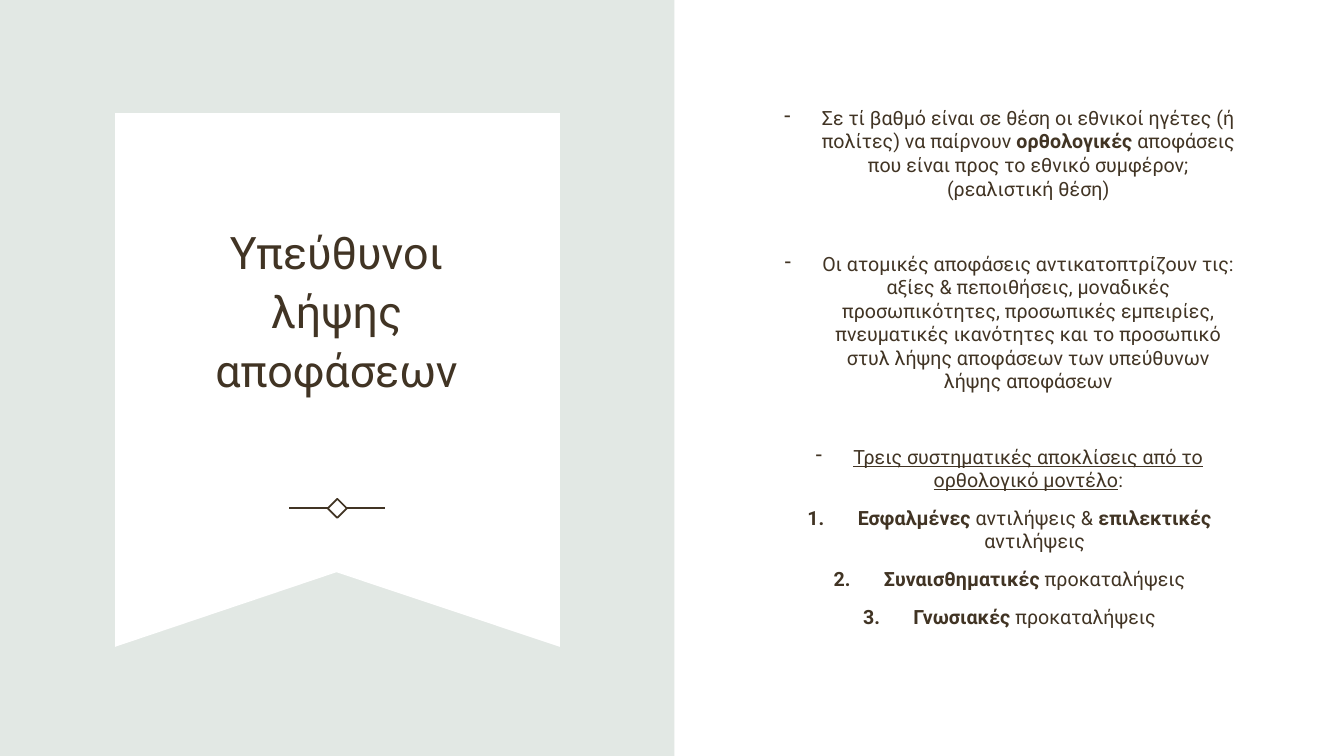
from lxml import etree
from pptx import Presentation
from pptx.dml.color import RGBColor
from pptx.enum.shapes import MSO_CONNECTOR as CONN, MSO_SHAPE as SHAPE
from pptx.enum.text import MSO_ANCHOR as ANCHOR, MSO_AUTO_SIZE as AUTO, PP_ALIGN as ALIGN
from pptx.oxml.ns import qn
from pptx.util import Cm, Pt

COLORS = {"sage": "E2E8E4", "white": "FFFFFF", "ink": "413424"}


def rgb(name):
    return RGBColor.from_string(COLORS[name])


def add_text(p, text, size=14, bold=False, underline=False):
    r = p.add_run()
    r.text = text
    r.font.name = "Roboto"
    r.font.size = Pt(size)
    r.font.bold = bold
    r.font.underline = underline
    r.font.color.rgb = rgb("ink")


prs = Presentation()
prs.slide_width, prs.slide_height = Cm(33.87), Cm(19.05)
s = prs.slides.add_slide(prs.slide_layouts[1])

panel = s.shapes.add_shape(SHAPE.RECTANGLE, 0, 0, Cm(17), prs.slide_height)
builder = s.shapes.build_freeform(Cm(2.9), Cm(2.85))
builder.add_line_segments(
    [(Cm(x), Cm(y)) for x, y in [(14.11, 2.85), (14.11, 16.3), (8.48, 14.42), (2.9, 16.3)]]
)
ribbon = builder.convert_to_shape()
for shape, color in [(panel, "sage"), (ribbon, "white")]:
    shape.shadow.inherit = False
    shape.fill.solid()
    shape.fill.fore_color.rgb = rgb(color)
    shape.line.fill.background()

diamond = s.shapes.add_shape(SHAPE.RECTANGLE, Cm(8.33), Cm(12.64), Cm(0.34), Cm(0.34))
diamond.rotation = 45
diamond.shadow.inherit = False
diamond.fill.background()
ornament = [diamond]
for left, right in [(7.29, 8.27), (8.71, 9.7)]:
    line = s.shapes.add_connector(CONN.STRAIGHT, Cm(left), Cm(12.81), Cm(right), Cm(12.81))
    etree.SubElement(line.element.spPr, qn("a:effectLst"))
    ornament.append(line)
for shape in ornament:
    shape.line.color.rgb = rgb("ink")
    shape.line.width = Pt(1.25)

title, body = s.shapes.title, s.placeholders[1]
frames = [(title, 3.81, 3.76, 9.35, 7.98), (body, 19.46, 2.41, 11.96, 14.25)]
for ph, left, top, width, height in frames:
    ph.left, ph.top, ph.width, ph.height = Cm(left), Cm(top), Cm(width), Cm(height)
    s.shapes.element.append(ph.element)
    tf = ph.text_frame
    tf.word_wrap = True
    tf.auto_size = AUTO.NONE
    tf.vertical_anchor = ANCHOR.MIDDLE

p = title.text_frame.paragraphs[0]
p.alignment = ALIGN.CENTER
p.line_spacing = 1.1
add_text(p, "Υπεύθυνοι λήψης αποφάσεων", size=32)

DASH = ("a:buChar", {"char": "-"}, 0.95)
NUMBER = ("a:buAutoNum", {"type": "arabicPeriod"}, 1.27)
BOLD, UNDERLINE = {"bold": True}, {"underline": True}
points = [
    (DASH, 0, [
        ("Σε τί βαθμό είναι σε θέση οι εθνικοί ηγέτες (ή πολίτες) να παίρνουν ", {}),
        ("ορθολογικές", BOLD),
        (" αποφάσεις που είναι προς το εθνικό συμφέρον; (ρεαλιστική θέση)", {}),
    ]),
    (DASH, 37, [
        ("Οι ατομικές αποφάσεις αντικατοπτρίζουν τις: αξίες & πεποιθήσεις, μοναδικές "
         "προσωπικότητες, προσωπικές εμπειρίες, πνευματικές ικανότητες και το προσωπικό "
         "στυλ λήψης αποφάσεων των υπεύθυνων λήψης αποφάσεων", {}),
    ]),
    (DASH, 37, [
        ("Τρεις συστηματικές αποκλίσεις από το ορθολογικό μοντέλο", UNDERLINE),
        (":", {}),
    ]),
    (NUMBER, 10, [
        ("Εσφαλμένες ", BOLD),
        ("αντιλήψεις & ", {}),
        ("επιλεκτικές", BOLD),
        (" αντιλήψεις", {}),
    ]),
    (NUMBER, 10, [("Συναισθηματικές", BOLD), (" προκαταλήψεις", {})]),
    (NUMBER, 10, [("Γνωσιακές", BOLD), (" προκαταλήψεις", {})]),
]

tf = body.text_frame
tf.margin_top, tf.margin_bottom = 0, Cm(0.58)
for i, ((tag, attrs, indent), gap, runs) in enumerate(points):
    p = tf.add_paragraph() if i else tf.paragraphs[0]
    p.alignment = ALIGN.CENTER
    p.line_spacing = 1.0
    p.space_before = Pt(gap)
    pPr = p._p.get_or_add_pPr()
    pPr.set("marL", str(Cm(indent)))
    pPr.set("indent", str(-Cm(indent)))
    etree.SubElement(pPr, qn("a:buFontTx"))
    etree.SubElement(pPr, qn(tag), attrs)
    for text, style in runs:
        add_text(p, text, **style)

prs.save("out.pptx")
